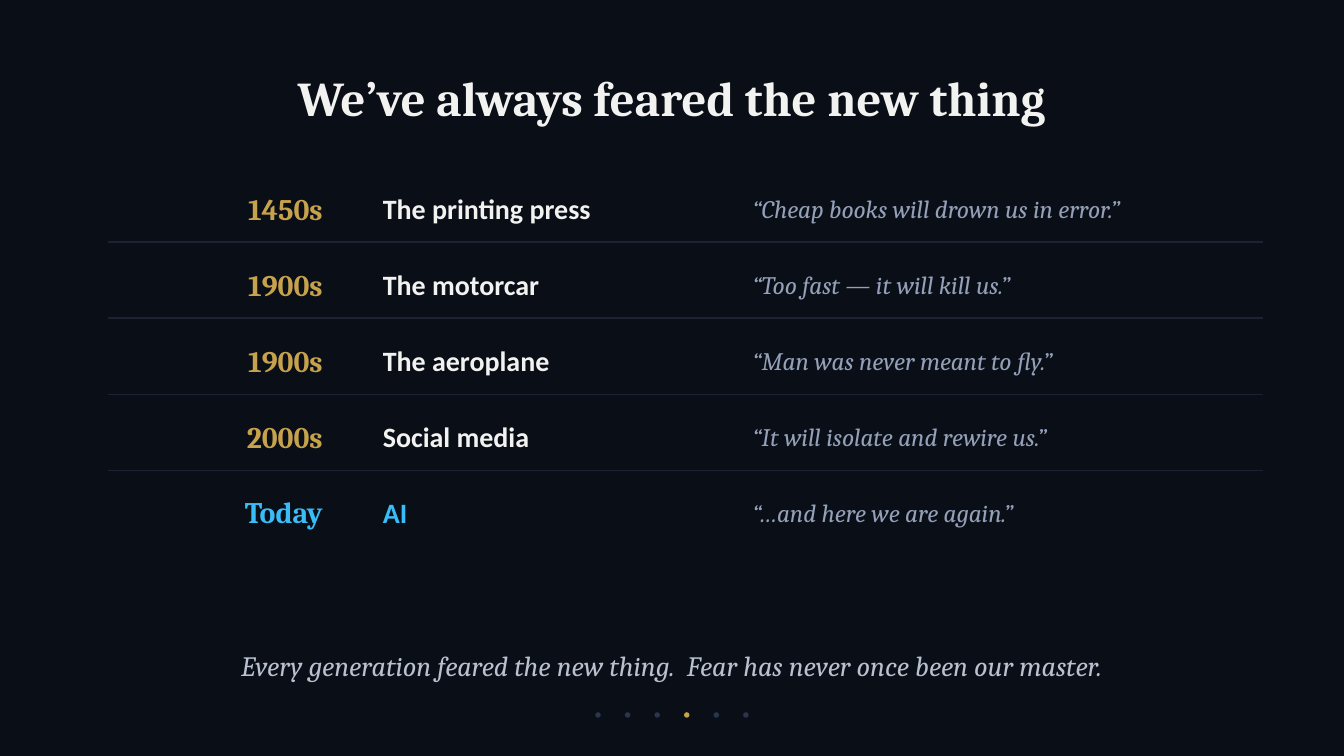
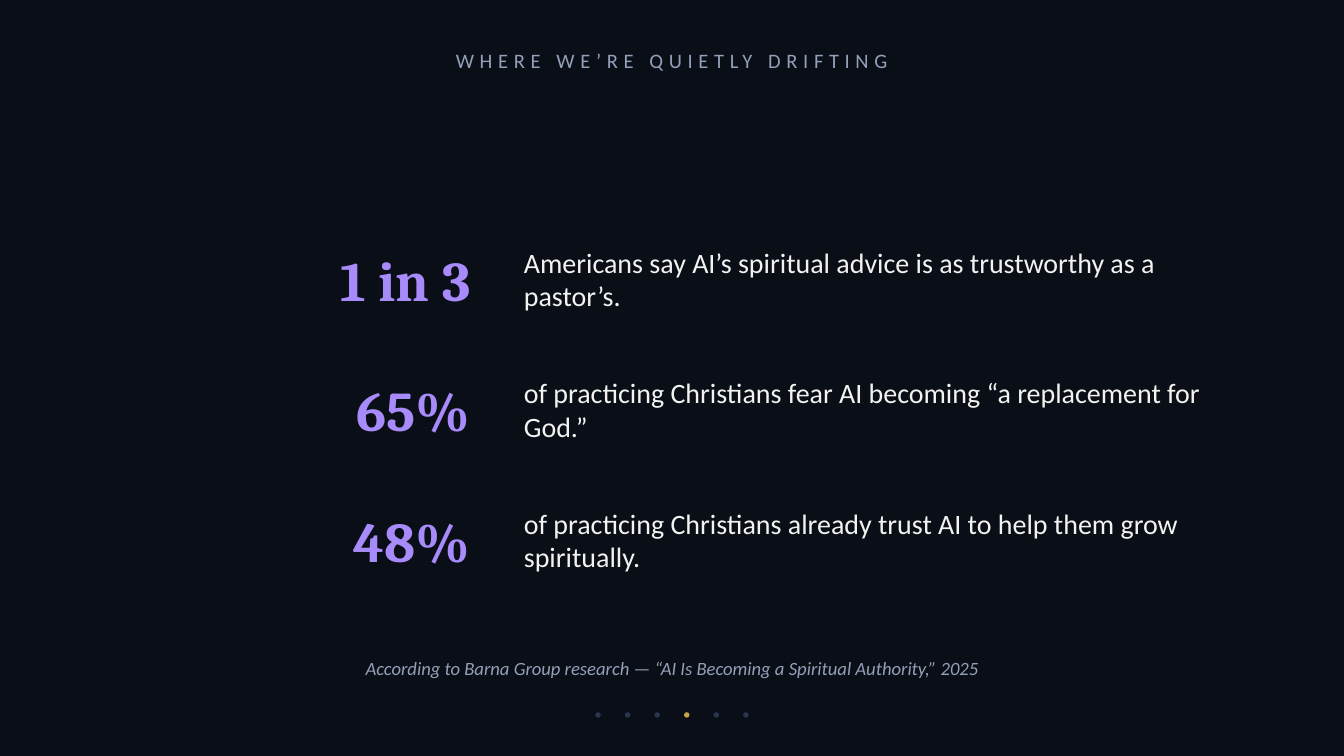
from pptx import Presentation
from pptx.dml.color import RGBColor
from pptx.enum.shapes import MSO_CONNECTOR, MSO_SHAPE
from pptx.enum.text import MSO_ANCHOR, PP_ALIGN
from pptx.oxml.ns import qn
from pptx.util import Inches, Pt
from lxml import etree

OVAL = MSO_SHAPE.OVAL
STRAIGHT = MSO_CONNECTOR.STRAIGHT
MIDDLE = MSO_ANCHOR.MIDDLE
LEFT, CENTER, RIGHT = PP_ALIGN.LEFT, PP_ALIGN.CENTER, PP_ALIGN.RIGHT

NIGHT = RGBColor(0x0A, 0x0E, 0x17)
WHITE = RGBColor(0xF2, 0xF2, 0xF0)
GOLD = RGBColor(0xC7, 0xA2, 0x4C)
BLUE = RGBColor(0x38, 0xBD, 0xF8)
VIOLET = RGBColor(0xA7, 0x8B, 0xFA)
SILVER = RGBColor(0xB9, 0xC0, 0xCF)
SLATE = RGBColor(0x93, 0xA0, 0xB8)
DOT = RGBColor(0x2A, 0x35, 0x50)
RULE = RGBColor(0x1A, 0x22, 0x33)

SERIF, SANS = "Cambria", "Calibri"

# Text styles
TITLE = {"name": SERIF, "size": Pt(26), "bold": True}
YEAR = {"name": SERIF, "size": Pt(16), "bold": True}
THING = {"name": SANS, "size": Pt(15), "bold": True}
QUOTE = {"name": SERIF, "size": Pt(13.5), "italic": True}
CLOSING = {"name": SERIF, "size": Pt(15), "italic": True}
KICKER = {"name": SANS, "size": Pt(11)}
FIGURE = {"name": SERIF, "size": Pt(30), "bold": True}
CLAIM = {"name": SANS, "size": Pt(15)}
SOURCE = {"name": SANS, "size": Pt(10), "italic": True}

# 16:9 page
prs = Presentation()
prs.slide_width = Inches(10)
prs.slide_height = prs.slide_width * 9 // 16


def add_slide():
    """Dark slide with the row of progress dots, the fourth one lit."""
    s = prs.slides.add_slide(prs.slide_layouts[6])
    s.background.fill.solid()
    s.background.fill.fore_color.rgb = NIGHT
    for i in range(6):
        dot = s.shapes.add_shape(OVAL, Inches(4.43 + 0.22 * i), Inches(5.3),
                                 Inches(0.04), Inches(0.04))
        dot.shadow.inherit = False
        dot.fill.solid()
        dot.fill.fore_color.rgb = GOLD if i == 3 else DOT
        dot.line.fill.background()
    return s


def add_text(s, x, y, w, h, text, style, color, align=LEFT):
    tf = s.shapes.add_textbox(Inches(x), Inches(y), Inches(w), Inches(h)).text_frame
    tf.word_wrap = True
    tf.vertical_anchor = MIDDLE
    p = tf.paragraphs[0]
    p.alignment = align
    r = p.add_run()
    r.text = text
    for key, value in style.items():
        setattr(r.font, key, value)
    r.font.color.rgb = color
    return r


# Slide 1: timeline of fears
s = add_slide()
add_text(s, 0.5, 0.42, 9, 0.6, "We’ve always feared the new thing", TITLE, WHITE, CENTER)

fears = [
    ("1450s", "The printing press", "“Cheap books will drown us in error.”"),
    ("1900s", "The motorcar", "“Too fast — it will kill us.”"),
    ("1900s", "The aeroplane", "“Man was never meant to fly.”"),
    ("2000s", "Social media", "“It will isolate and rewire us.”"),
    ("Today", "AI", "“…and here we are again.”"),
]
last = len(fears) - 1
pitch = (3.56 - 1.3) / last
rule_top = 1.8
rule_pitch = (3.5 - rule_top) / (last - 1)
for i, (year, thing, quote) in enumerate(fears):
    y = 1.3 + pitch * i
    add_text(s, 0.8, y, 1.7, 0.5, year, YEAR, BLUE if i == last else GOLD, RIGHT)
    add_text(s, 2.75, y, 2.75, 0.5, thing, THING, BLUE if i == last else WHITE)
    add_text(s, 5.5, y, 3.9, 0.5, quote, QUOTE, SLATE)
    if i < last:
        rule_y = Inches(rule_top + rule_pitch * i)
        rule = s.shapes.add_connector(STRAIGHT, Inches(0.8), rule_y, Inches(9.4), rule_y)
        rule.line.color.rgb = RULE
        rule.line.width = Pt(0.75)
        etree.SubElement(rule._element.spPr, qn("a:effectLst"))

add_text(s, 0.5, 4.75, 9, 0.4,
         "Every generation feared the new thing.  Fear has never once been our master.",
         CLOSING, SILVER, CENTER)

# Slide 2: survey figures
s = add_slide()
r = add_text(s, 0, 0.3, 10, 0.3, "WHERE WE’RE QUIETLY DRIFTING", KICKER, SLATE, CENTER)
r._r.get_or_add_rPr().set("spc", "300")

findings = [
    ("1 in 3", "Americans say AI’s spiritual advice is as trustworthy as a pastor’s."),
    ("65%", "of practicing Christians fear AI becoming “a replacement for God.”"),
    ("48%", "of practicing Christians already trust AI to help them grow spiritually."),
]
for i, (figure, claim) in enumerate(findings):
    y = 1.65 + 0.97 * i
    add_text(s, 0.7, y, 2.9, 0.85, figure, FIGURE, VIOLET, RIGHT)
    add_text(s, 3.8, y, 5.5, 0.85, claim, CLAIM, WHITE)

add_text(s, 0.5, 4.82, 9, 0.3,
         "According to Barna Group research — “AI Is Becoming a Spiritual Authority,” 2025",
         SOURCE, SLATE, CENTER)

prs.save("out.pptx")
